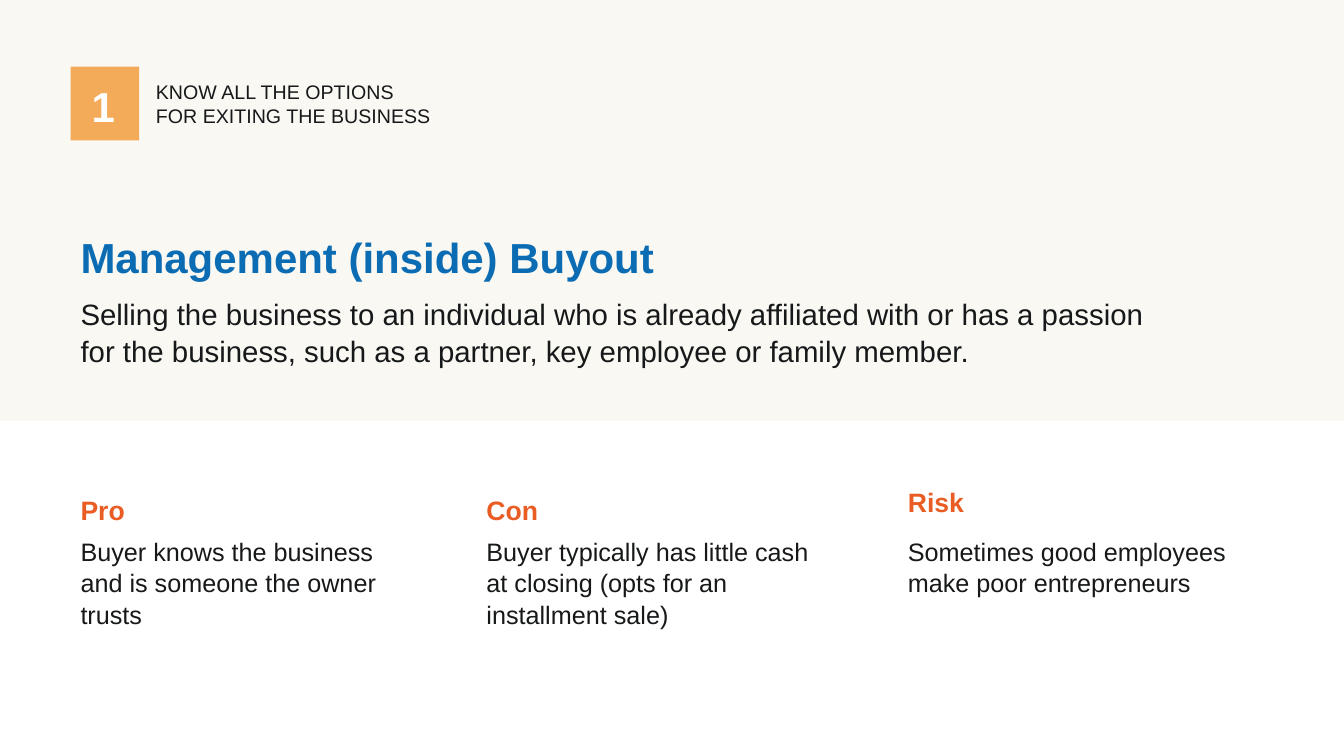
from dataclasses import dataclass

from pptx import Presentation
from pptx import util as u
from pptx.dml.color import RGBColor
from pptx.enum import shapes, text


@dataclass(frozen=True)
class Theme:
    """Colours, type sizes and font of the slide."""
    font: str = "Arial"
    cream: str = "F9F8F3"
    white: str = "FFFFFF"
    amber: str = "F3AB59"
    orange: str = "E95C24"
    blue: str = "0C6CB3"
    ink: str = "161819"
    title: float = 30
    lead: float = 21
    head: float = 19
    body: float = 18
    label: float = 14
    spacing: float = 1.05


@dataclass(frozen=True)
class Box:
    """Left, top, width and height in centimetres."""
    left: float
    top: float
    width: float
    height: float

    def place(self) -> tuple:
        """Return the box as lengths."""
        return tuple(u.Cm(n) for n in (self.left, self.top, self.width, self.height))


@dataclass(frozen=True)
class Note:
    """A piece of text with its box and style."""
    words: str
    box: Box
    size: float
    colour: str
    bold: bool = False


@dataclass(frozen=True)
class Column:
    """A heading above a short text."""
    head: str
    body: str
    left: float
    top: float
    wide: float
    width: float
    height: float


THEME = Theme()
WIDE, HIGH = 33.87, 19.05
MARGIN = 1.78
BODY_TOP = 13.34

BLOCKS = (
    (Box(0, 10.6, WIDE, HIGH - 10.6), THEME.white),
    (Box(MARGIN, 1.68, 1.73, 1.86), THEME.amber),
)

NOTES = (
    Note("1", Box(2.06, 1.83, 1.68, 1.55), THEME.title, THEME.white, True),
    Note("KNOW ALL THE OPTIONS\nFOR EXITING THE BUSINESS",
         Box(3.68, 1.85, 8.92, 1.45), THEME.label, THEME.ink),
    Note("Management (inside) Buyout",
         Box(MARGIN, 5.64, 25.17, 1.55), THEME.title, THEME.blue, True),
    Note("Selling the business to an individual who is already affiliated with or has "
         "a passion for the business, such as a partner, key employee or family member.",
         Box(MARGIN, 7.29, 27.58, 2.06), THEME.lead, THEME.ink),
)

COLUMNS = (
    Column("Pro", "Buyer knows the business and is someone the owner trusts",
           MARGIN, 12.27, 9.75, 8.76, 1.8),
    Column("Con", "Buyer typically has little cash at closing (opts for an installment sale)",
           12.01, 12.27, 8.1, 9.14, 2.57),
    Column("Risk", "Sometimes good employees make poor entrepreneurs",
           22.63, 12.09, 9.75, 9.09, 1.8),
)


def tint(fill, colour: str) -> None:
    """Give a fill one solid colour."""
    fill.solid()
    fill.fore_color.rgb = RGBColor.from_string(colour)


def draw_block(slide, box: Box, colour: str) -> None:
    """Draw a plain rectangle."""
    shape = slide.shapes.add_shape(shapes.MSO_SHAPE.RECTANGLE, *box.place())
    shape.shadow.inherit = False
    tint(shape.fill, colour)
    shape.line.fill.background()


def draw_note(slide, note: Note) -> None:
    """Draw a text box, with a line break between lines."""
    frame = slide.shapes.add_textbox(*note.box.place()).text_frame
    frame.word_wrap = True
    frame.auto_size = text.MSO_AUTO_SIZE.SHAPE_TO_FIT_TEXT
    para = frame.paragraphs[0]
    para.line_spacing = THEME.spacing
    for row, words in enumerate(note.words.split("\n")):
        if row:
            para.add_line_break()
        run = para.add_run()
        run.text = words
        run.font.name = THEME.font
        run.font.size = u.Pt(note.size)
        run.font.bold = note.bold
        run.font.color.rgb = RGBColor.from_string(note.colour)


def draw_column(slide, col: Column) -> None:
    """Draw a heading and the text below it."""
    draw_note(slide, Note(col.head, Box(col.left, col.top, col.wide, 1.07),
                          THEME.head, THEME.orange, True))
    draw_note(slide, Note(col.body, Box(col.left, BODY_TOP, col.width, col.height),
                          THEME.body, THEME.ink))


def main() -> None:
    """Build the slide and save it."""
    deck = Presentation()
    deck.slide_width, deck.slide_height = u.Cm(WIDE), u.Cm(HIGH)
    slide = deck.slides.add_slide(deck.slide_layouts[6])
    tint(slide.background.fill, THEME.cream)
    for box, colour in BLOCKS:
        draw_block(slide, box, colour)
    for note in NOTES:
        draw_note(slide, note)
    for col in COLUMNS:
        draw_column(slide, col)
    deck.save("out.pptx")


if __name__ == "__main__":
    main()
